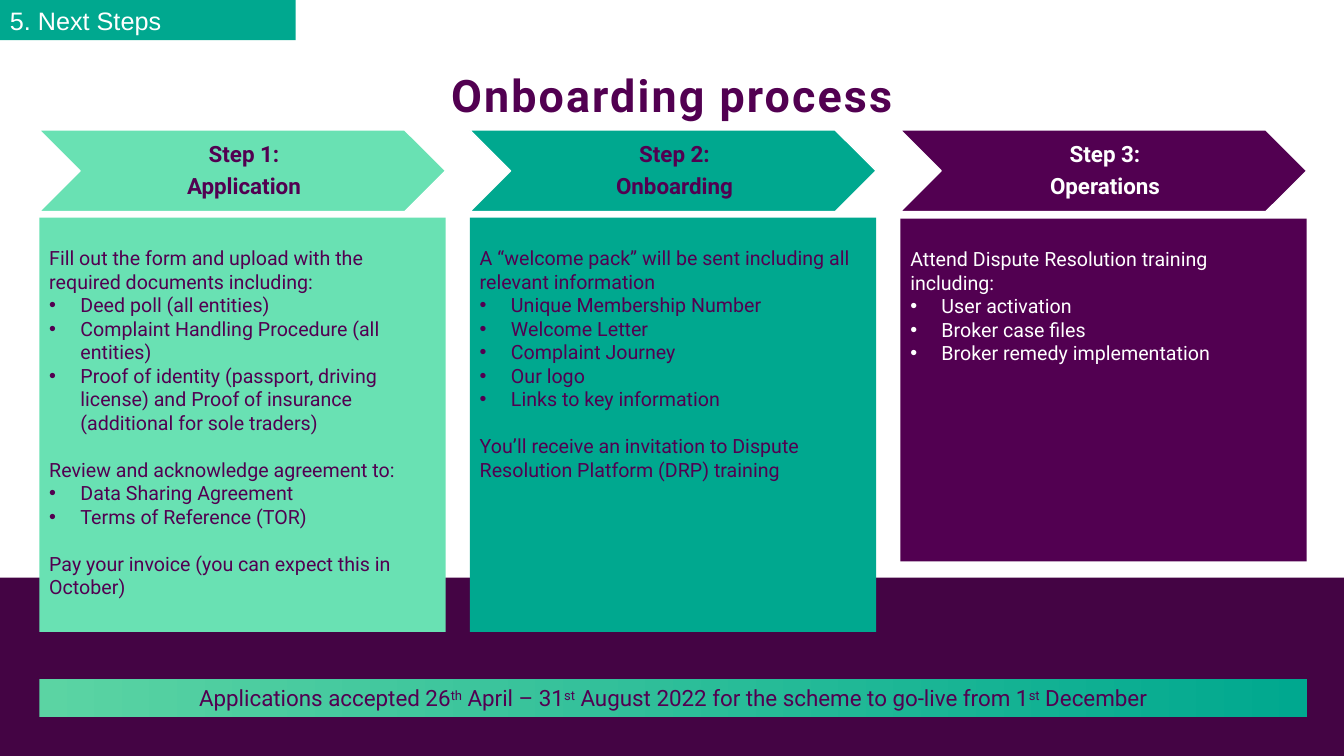
from dataclasses import dataclass

import pptx
import pptx.dml.color
import pptx.enum.shapes
import pptx.enum.text
import pptx.util
from lxml import etree

SHAPE = pptx.enum.shapes.MSO_SHAPE
ALIGN = pptx.enum.text.PP_ALIGN
ANCHOR = pptx.enum.text.MSO_ANCHOR
Pt, Inches = pptx.util.Pt, pptx.util.Inches

COLORS = {
    "white": "FFFFFF", "plum": "520051", "dark": "440444",
    "mint": "69E1B3", "teal": "00A88F", "fade": "5BD4A3",
}
WIDTH, HEIGHT = 13.33, 7.5
MARGIN, COLUMN, GUTTER = 0.39, 4.03, 0.24
GRID_WIDTH = 3 * COLUMN + 2 * GUTTER
ROWS = {  # top and height of each row
    "tag": (0, 0.4), "title": (0.2, 1.54), "arrow": (1.29, 0.81),
    "card": (2.16, 4.11), "short card": (2.17, 3.4),
    "base": (5.73, 1.77), "dates": (6.74, 0.37),
}
LINE = Pt(16.8)
INDENT = Inches(0.31)
PLAIN = {"name": "Roboto", "size": Pt(14)}
HEAD = {"name": "Roboto", "size": Pt(16), "bold": True}
TITLE = {"name": "Roboto", "size": Pt(32), "bold": True}
DATES = {"name": "Roboto", "size": Pt(16)}
TAG = {"name": "Arial", "size": Pt(18)}


@dataclass(frozen=True)
class Block:
    lead: str
    bullets: tuple[str, ...] = ()


@dataclass(frozen=True)
class Step:
    number: int
    name: str
    fill: str
    ink: str
    row: str
    blocks: tuple[Block, ...]


STEPS = (
    Step(1, "Application", "mint", "plum", "card", (
        Block("Fill out the form and upload with the required documents including:", (
            "Deed poll (all entities)",
            "Complaint Handling Procedure (all entities)",
            "Proof of identity (passport, driving license) and Proof of insurance "
            "(additional for sole traders)")),
        Block("Review and acknowledge agreement to:", (
            "Data Sharing Agreement", "Terms of Reference (TOR)")),
        Block("Pay your invoice (you can expect this in October)"))),
    Step(2, "Onboarding", "teal", "plum", "card", (
        Block("A “welcome pack” will be sent including all relevant information", (
            "Unique Membership Number", "Welcome Letter", "Complaint Journey",
            "Our logo", "Links to key information")),
        Block("You’ll receive an invitation to Dispute Resolution Platform (DRP) training"))),
    Step(3, "Operations", "plum", "white", "short card", (
        Block("Attend Dispute Resolution training including:", (
            "User activation", "Broker case files", "Broker remedy implementation")),)),
)
DATE_RUNS = (
    ("Applications accepted 26", False), ("th", True), (" April – 31", False), ("st", True),
    (" August 2022 for the scheme to go-live from 1", False), ("st", True),
    (" December", False),
)


def rgb(name: str) -> pptx.dml.color.RGBColor:
    return pptx.dml.color.RGBColor.from_string(COLORS[name])


def assign(target, values: dict) -> None:
    for key, value in values.items():
        setattr(target, key, value)


def area(left: float, width: float, row: str) -> tuple:
    top, height = ROWS[row]
    return tuple(Inches(v) for v in (left, top, width, height))


def add_panel(s, place: tuple, fill: str, kind=SHAPE.RECTANGLE):
    sp = s.shapes.add_shape(kind, *place)
    sp.shadow.inherit = False
    sp.fill.solid()
    sp.fill.fore_color.rgb = rgb(fill)
    sp.line.fill.background()
    assign(sp.text_frame, {"word_wrap": True, "vertical_anchor": ANCHOR.TOP})
    return sp


def add_label(s, place: tuple):
    tf = s.shapes.add_textbox(*place).text_frame
    assign(tf, {"word_wrap": True, "vertical_anchor": ANCHOR.MIDDLE})
    return tf


def add_line(tf, text: str, font: dict, ink: str, layout: dict, bullet: bool = False):
    """Write a paragraph, using the frame's first one while it is empty."""
    first = tf.paragraphs[0]
    p = tf.add_paragraph() if first.runs else first
    assign(p, layout)
    if bullet:
        pPr = p._p.get_or_add_pPr()
        pPr.set("marL", str(INDENT))
        pPr.set("indent", str(-INDENT))
        ns = "{http://schemas.openxmlformats.org/drawingml/2006/main}"
        etree.SubElement(pPr, ns + "buFont", typeface="Arial")
        etree.SubElement(pPr, ns + "buChar", char="•")
    return add_run(p, text, font, ink)


def add_run(p, text: str, font: dict, ink: str):
    r = p.add_run()
    r.text = text
    assign(r.font, font)
    r.font.color.rgb = rgb(ink)
    return r


def add_card(s, step: Step, left: float) -> None:
    tf = add_panel(s, area(left, COLUMN, step.row), step.fill).text_frame
    tf.margin_top = Inches(0.28)
    for i, block in enumerate(step.blocks):
        layout = {"alignment": ALIGN.LEFT}
        lead = layout | {"space_before": LINE} if i else layout
        add_line(tf, block.lead, PLAIN, step.ink, lead)
        for bullet in block.bullets:
            add_line(tf, bullet, PLAIN, step.ink, layout, bullet=True)


def add_arrow(s, step: Step, left: float) -> None:
    sp = add_panel(s, area(left, COLUMN, "arrow"), step.fill, SHAPE.CHEVRON)
    sp.line.color.rgb = rgb("white")
    sp.line.width = Pt(1)
    tf = add_label(s, area(left + COLUMN * 0.2, COLUMN * 0.6, "arrow"))
    assign(tf, {"margin_left": Inches(0.04), "margin_right": Inches(0.01),
                "margin_top": Inches(0.01), "margin_bottom": Inches(0.01)})
    layout = {"alignment": ALIGN.CENTER, "line_spacing": 0.9}
    add_line(tf, f"Step {step.number}:", HEAD, step.ink, layout)
    add_line(tf, step.name, HEAD, step.ink, layout | {"space_before": Pt(5.6)})


def add_dates(s) -> None:
    sp = add_panel(s, area(MARGIN, GRID_WIDTH, "dates"), "teal")
    sp.fill.gradient()
    sp.fill.gradient_angle = 0
    for stop, name in zip(sp.fill.gradient_stops, ("fade", "teal")):
        stop.color.rgb = rgb(name)
    p = sp.text_frame.paragraphs[0]
    p.alignment = ALIGN.CENTER
    for text, raised in DATE_RUNS:
        r = add_run(p, text, DATES, "plum")
        if raised:
            r._r.get_or_add_rPr().set("baseline", "30000")


def main() -> None:
    prs = pptx.Presentation()
    assign(prs, {"slide_width": Inches(WIDTH), "slide_height": Inches(HEIGHT)})
    s = prs.slides.add_slide(prs.slide_layouts[6])

    r = add_line(add_label(s, area(0, WIDTH, "title")), "Onboarding process", TITLE, "plum",
                 {"alignment": ALIGN.CENTER, "line_spacing": 0.9})
    r._r.get_or_add_rPr().set("spc", "150")
    add_panel(s, area(0, WIDTH, "base"), "dark")
    for i, step in enumerate(STEPS):
        left = MARGIN + i * (COLUMN + GUTTER)
        add_card(s, step, left)
        add_arrow(s, step, left)
    add_dates(s)
    tag = add_panel(s, area(0, WIDTH * 0.22, "tag"), "teal")
    add_line(tag.text_frame, "5. Next Steps", TAG, "white", {"alignment": ALIGN.LEFT})

    prs.save("out.pptx")


if __name__ == "__main__":
    main()
